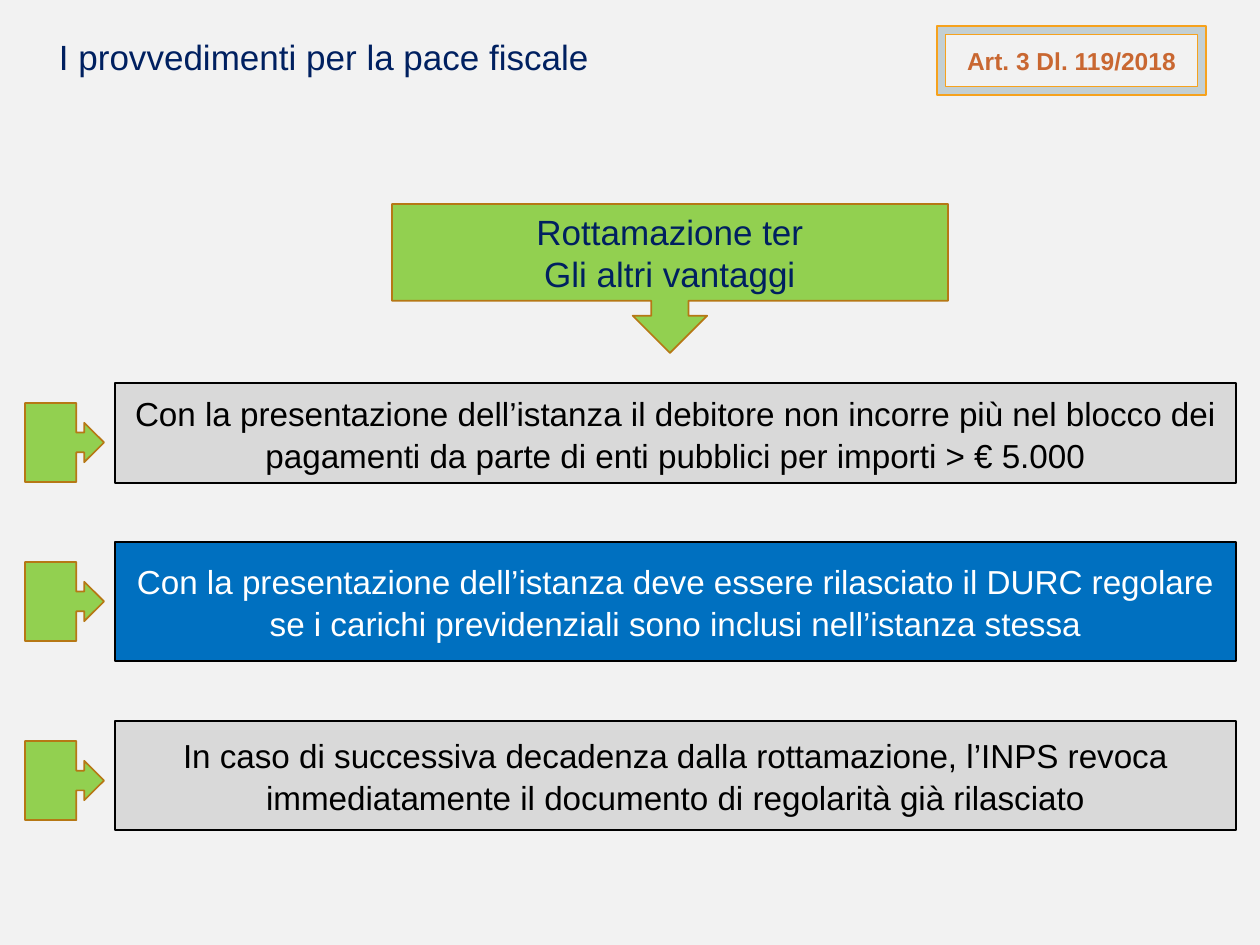
from pptx import Presentation
from pptx.dml.color import RGBColor
from pptx.enum.shapes import MSO_SHAPE
from pptx.enum.text import MSO_ANCHOR, MSO_AUTO_SIZE, PP_ALIGN
from pptx.util import Pt

EMU_PER_PX = 914400 / 126
FONT = "Arial"

RECTANGLE = MSO_SHAPE.RECTANGLE
FRAME = MSO_SHAPE.FRAME
DOWN_CALLOUT = MSO_SHAPE.DOWN_ARROW_CALLOUT
RIGHT_CALLOUT = MSO_SHAPE.RIGHT_ARROW_CALLOUT
MIDDLE = MSO_ANCHOR.MIDDLE
CENTER = PP_ALIGN.CENTER
JUSTIFY = PP_ALIGN.JUSTIFY
GROW = MSO_AUTO_SIZE.SHAPE_TO_FIT_TEXT

BACKGROUND = RGBColor(0xF2, 0xF2, 0xF2)
NAVY = RGBColor(0x00, 0x20, 0x60)
GREEN = RGBColor(0x92, 0xD0, 0x50)
BROWN = RGBColor(0xB6, 0x78, 0x15)
GREY = RGBColor(0xD9, 0xD9, 0xD9)
BLUE = RGBColor(0x00, 0x70, 0xC0)
BLACK = RGBColor(0x00, 0x00, 0x00)
WHITE = RGBColor(0xFF, 0xFF, 0xFF)
FRAME_GREY = RGBColor(0xC3, 0xCF, 0xD3)
ORANGE = RGBColor(0xF6, 0xA2, 0x1D)
RUST = RGBColor(0xC9, 0x67, 0x31)

BENEFIT_LEFT, BENEFIT_WIDTH = 115, 1121
MARKER_LEFT, MARKER_SIZE, MARKER_DROP = 25, 79, 20

# top, height, fill, text colour, text
BENEFITS = [
    (383, 100, GREY, BLACK,
     "Con la presentazione dell’istanza il debitore non incorre più nel blocco dei "
     "pagamenti da parte di enti pubblici per importi > € 5.000"),
    (542, 119, BLUE, WHITE,
     "Con la presentazione dell’istanza deve essere rilasciato il DURC regolare "
     "se i carichi previdenziali sono inclusi nell’istanza stessa"),
    (721, 109, GREY, BLACK,
     "In caso di successiva decadenza dalla rottamazione, l’INPS revoca "
     "immediatamente il documento di regolarità già rilasciato"),
]


def px(length):
    return round(length * EMU_PER_PX)


def write(text_frame, lines, size, color, align=CENTER, bold=False, spacing=None):
    """Fill a text frame with one paragraph per line."""
    text_frame.word_wrap = True
    text_frame.vertical_anchor = MIDDLE
    for index, line in enumerate(lines):
        paragraph = text_frame.add_paragraph() if index else text_frame.paragraphs[0]
        paragraph.alignment = align
        if spacing:
            paragraph.line_spacing = Pt(spacing)
        run = paragraph.add_run()
        run.text = line
        run.font.name = FONT
        run.font.size = Pt(size)
        run.font.bold = bold
        run.font.color.rgb = color


def add_block(slide, preset, box, fill, line, line_width):
    block = slide.shapes.add_shape(preset, *map(px, box))
    block.shadow.inherit = False
    block.fill.solid()
    block.fill.fore_color.rgb = fill
    block.line.color.rgb = line
    block.line.width = Pt(line_width)
    return block


def add_title(slide, text):
    title = slide.shapes.add_textbox(px(44), px(28), px(784), px(57))
    frame = title.text_frame
    frame.margin_left = frame.margin_right = px(15)
    frame.margin_top = frame.margin_bottom = px(8)
    write(frame, [text], 20, NAVY, JUSTIFY)
    frame.auto_size = GROW


def add_benefit(slide, top, height, fill, color, text):
    """Add a benefit bar with its arrow marker on the left."""
    bar = add_block(slide, RECTANGLE, (BENEFIT_LEFT, top, BENEFIT_WIDTH, height),
                    fill, BLACK, 0.75)
    write(bar.text_frame, [text], 19, color, spacing=24)
    add_block(slide, RIGHT_CALLOUT,
              (MARKER_LEFT, top + MARKER_DROP, MARKER_SIZE, MARKER_SIZE),
              GREEN, BROWN, 1)


def main():
    deck = Presentation()
    deck.slide_width, deck.slide_height = px(1260), px(945)
    slide = deck.slides.add_slide(deck.slide_layouts[6])
    slide.background.fill.solid()
    slide.background.fill.fore_color.rgb = BACKGROUND

    add_title(slide, "I provvedimenti per la pace fiscale")
    heading = add_block(slide, DOWN_CALLOUT, (392, 204, 556, 149), GREEN, BROWN, 1)
    write(heading.text_frame, ["Rottamazione ter", "Gli altri vantaggi"], 20, NAVY)
    for benefit in BENEFITS:
        add_benefit(slide, *benefit)
    law = add_block(slide, FRAME, (937, 26, 269, 69), FRAME_GREY, ORANGE, 0.75)
    write(law.text_frame, ["Art. 3 Dl. 119/2018"], 14, RUST, bold=True)

    deck.save("out.pptx")


if __name__ == "__main__":
    main()
